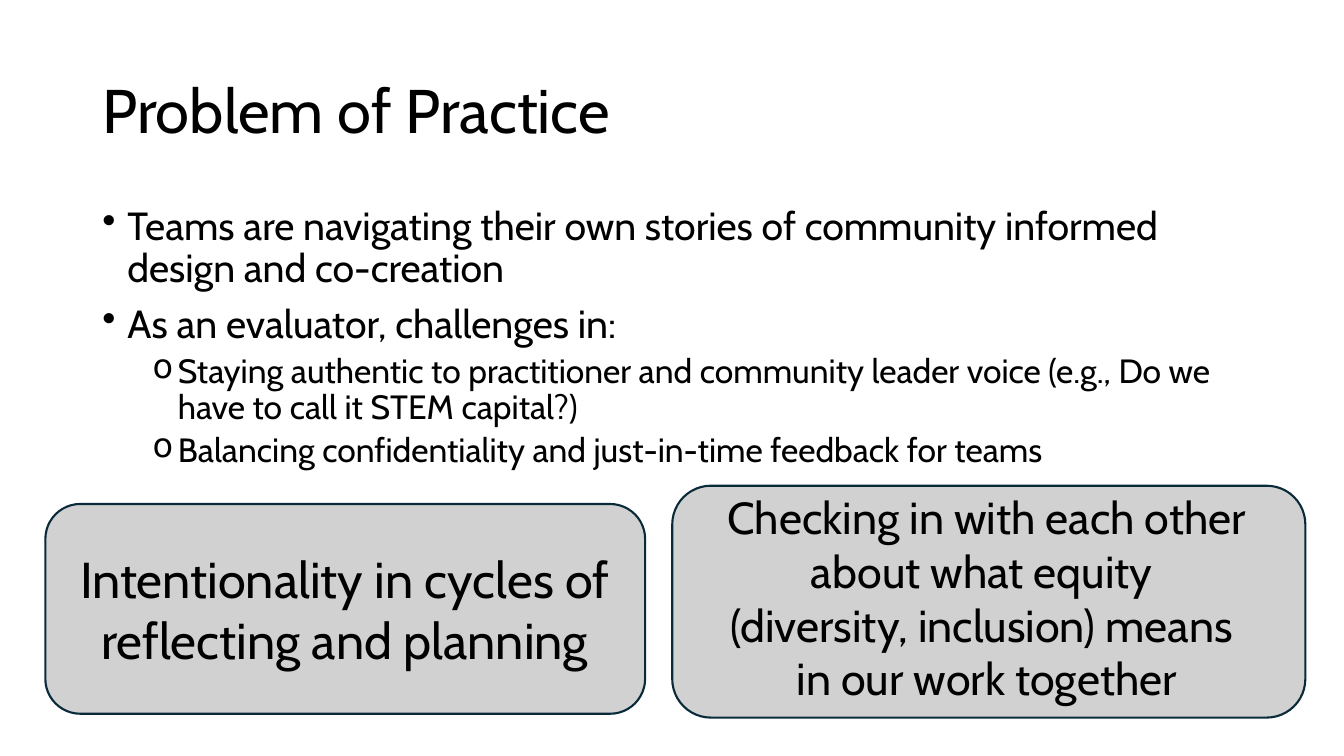
from lxml import etree
from pptx import Presentation
from pptx.dml.color import RGBColor
from pptx.enum import shapes, text
from pptx.oxml import ns
from pptx.util import Pt

BLACK = RGBColor(0x00, 0x00, 0x00)
CARD_FILL = RGBColor(0xD1, 0xD1, 0xD1)
CARD_LINE = RGBColor(0x09, 0x2A, 0x39)
FONT = "Cabin"

# text, bullet, level, size, left margin, space before
CHALLENGES = [
    ("Teams are navigating their own stories of community informed design and co-creation ",
     "•", 0, 28, 18, 0),
    ("As an evaluator, challenges in:", "•", 0, 28, 18, 10),
    ("Staying authentic to practitioner and community leader voice (e.g., Do we have to call it STEM capital?)",
     "o", 1, 24, 54, 5),
    ("Balancing confidentiality and just-in-time feedback for teams", "o", 1, 24, 54, 5),
]
INTENTIONALITY = ["Intentionality in cycles of reflecting and planning"]
CHECKING_IN = [
    "Checking in with each other about what equity ",
    "(diversity, inclusion) means ",
    "in our work together",
]


def add_card(slide, left, top, width, height):
    card = slide.shapes.add_shape(
        shapes.MSO_SHAPE.ROUNDED_RECTANGLE, Pt(left), Pt(top), Pt(width), Pt(height))
    card.shadow.inherit = False
    card.fill.solid()
    card.fill.fore_color.rgb = CARD_FILL
    card.line.color.rgb = CARD_LINE
    card.line.width = Pt(1.5)


def add_text_frame(slide, left, top, width, height, anchor=text.MSO_ANCHOR.TOP):
    box = slide.shapes.add_textbox(Pt(left), Pt(top), Pt(width), Pt(height))
    frame = box.text_frame
    frame.word_wrap = True
    frame.vertical_anchor = anchor
    return frame


def next_paragraph(frame, index):
    """Use the paragraph a new frame already has before adding more."""
    return frame.add_paragraph() if index else frame.paragraphs[0]


def set_font(paragraph, size):
    paragraph.font.name = FONT
    paragraph.font.size = Pt(size)
    paragraph.font.color.rgb = BLACK


def set_bullet(paragraph, character, margin):
    properties = paragraph._p.get_or_add_pPr()
    properties.set("marL", str(Pt(margin)))
    properties.set("indent", str(Pt(-18)))
    bullet = etree.SubElement(properties, ns.qn("a:buChar"))
    bullet.set("char", character)


def add_title(slide, title):
    frame = add_text_frame(slide, 66, 28.75, 828, 104.4, text.MSO_ANCHOR.MIDDLE)
    paragraph = frame.paragraphs[0]
    paragraph.text = title
    paragraph.line_spacing = 0.9
    set_font(paragraph, 44)


def add_bullets(slide, items):
    frame = add_text_frame(slide, 66, 143.75, 828, 342.6)
    for index, (words, character, level, size, margin, space) in enumerate(items):
        paragraph = next_paragraph(frame, index)
        paragraph.text = words
        paragraph.level = level
        paragraph.line_spacing = 0.9
        paragraph.space_before = Pt(space)
        set_bullet(paragraph, character, margin)
        set_font(paragraph, size)


def add_card_text(slide, left, top, width, height, lines, size):
    frame = add_text_frame(slide, left, top, width, height)
    for index, line in enumerate(lines):
        paragraph = next_paragraph(frame, index)
        paragraph.text = line
        paragraph.alignment = text.PP_ALIGN.CENTER
        set_font(paragraph, size)


def main():
    presentation = Presentation()
    presentation.slide_width = Pt(960)
    presentation.slide_height = Pt(540)
    slide = presentation.slides.add_slide(presentation.slide_layouts[6])

    add_title(slide, "Problem of Practice")
    add_bullets(slide, CHALLENGES)
    add_card(slide, 32.4, 360, 428.4, 149.8)
    add_card_text(slide, 38.9, 388, 414.7, 94.3, INTENTIONALITY, 36)
    add_card(slide, 480.2, 347, 452.2, 165.6)
    add_card_text(slide, 478.8, 346.3, 452.2, 163.4, CHECKING_IN, 32)

    presentation.save("out.pptx")


if __name__ == "__main__":
    main()
